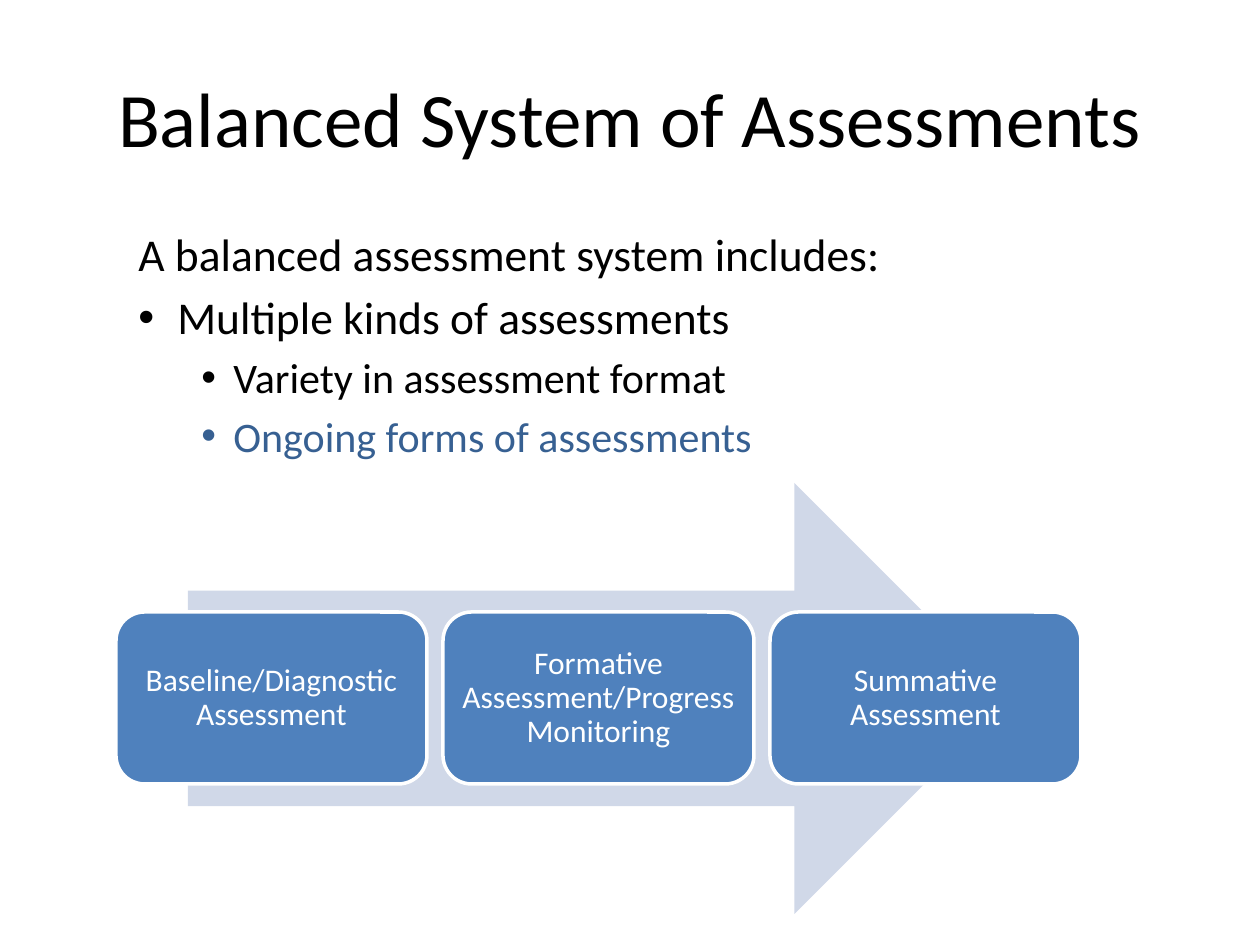
"""Build the slide on a balanced system of assessments."""
from lxml import etree
from pptx import Presentation, util as u
from pptx.dml.color import RGBColor
from pptx.enum import shapes, text
from pptx.oxml.ns import qn


def px(length):
    return u.Emu(round(length * 914400 / 126))


def style(para, size, color):
    for span in para.runs:
        span.font.name = "Calibri"
        span.font.size = u.Pt(size)
        span.font.color.rgb = RGBColor.from_string(color)


deck = Presentation()
deck.slide_width, deck.slide_height = px(1260), px(945)
page = deck.slides.add_slide(deck.slide_layouts[5])

title = page.shapes.title
title.left, title.top, title.width, title.height = px(63), px(38), px(1134), px(158)
title.text_frame.text = "Balanced System of Assessments"
title.text_frame.vertical_anchor = text.MSO_ANCHOR.MIDDLE
title.text_frame.paragraphs[0].alignment = text.PP_ALIGN.CENTER
style(title.text_frame.paragraphs[0], 44, "000000")

points = [
    ("A balanced assessment system includes:", 0, False, "000000"),
    ("Multiple kinds of assessments", 0, True, "000000"),
    ("Variety in assessment format", 1, True, "000000"),
    ("Ongoing forms of assessments", 1, True, "376092"),
]
levels = [(26, 102, 39, 5), (24, 158, 32, 4.5)]
body = page.shapes.add_textbox(px(63), px(220), px(1134), px(624))
frame = body.text_frame
frame.word_wrap = True
frame.text = "\n".join(point[0] for point in points)
for para, (_, level, bulleted, color) in zip(frame.paragraphs, points):
    size, margin, hanging, gap = levels[level]
    para.level = level
    para.space_before = u.Pt(gap)
    style(para, size, color)
    props = para._p.get_or_add_pPr()
    props.set("marL", str(px(margin)))
    props.set("indent", str(-px(hanging)))
    if bulleted:
        etree.SubElement(props, qn("a:buFont")).set("typeface", "Arial")
        etree.SubElement(props, qn("a:buChar")).set("char", "•")
    else:
        etree.SubElement(props, qn("a:buNone"))

arrow = page.shapes.add_shape(
    shapes.MSO_SHAPE.RIGHT_ARROW, px(188), px(483), px(822), px(431))
arrow.shadow.inherit = False
arrow.fill.solid()
arrow.fill.fore_color.rgb = RGBColor.from_string("D0D8E8")
arrow.line.fill.background()

stages = [
    "Baseline/Diagnostic Assessment",
    "Formative Assessment/Progress Monitoring",
    "Summative Assessment",
]
for index, stage in enumerate(stages):
    box = page.shapes.add_shape(
        shapes.MSO_SHAPE.ROUNDED_RECTANGLE,
        px(116 + 327 * index), px(612), px(311), px(172))
    box.shadow.inherit = False
    box.fill.solid()
    box.fill.fore_color.rgb = RGBColor.from_string("4F81BD")
    box.line.color.rgb = RGBColor.from_string("FFFFFF")
    box.line.width = u.Pt(2)
    frame = box.text_frame
    frame.text = stage
    frame.word_wrap = True
    frame.vertical_anchor = text.MSO_ANCHOR.MIDDLE
    frame.margin_left = frame.margin_right = px(9)
    frame.margin_top = frame.margin_bottom = px(9)
    para = frame.paragraphs[0]
    para.alignment = text.PP_ALIGN.CENTER
    para.line_spacing = 0.9
    style(para, 18, "FFFFFF")

deck.save("out.pptx")
